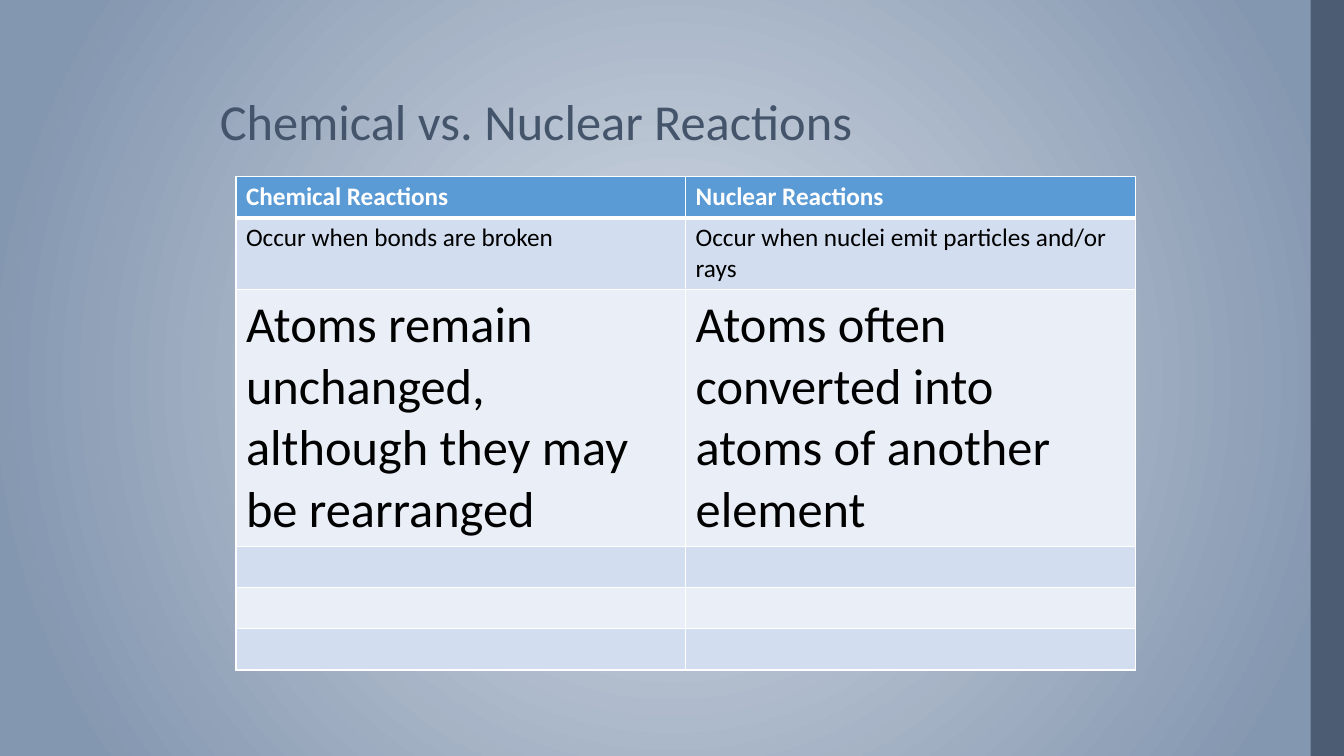
import lxml.etree
import pptx
import pptx.dml.color
import pptx.enum.shapes
import pptx.enum.text
import pptx.oxml
import pptx.oxml.ns
import pptx.util

WIDTH, HEIGHT = 13.33, 7.5
FONT = "Calibri"
COLORS = {
    "glow": "D6DCE5",
    "edge": "8497B0",
    "slate": "44546A",
    "header": "5B9BD5",
    "band_dark": "D2DEEF",
    "band_light": "EAEFF7",
    "white": "FFFFFF",
    "black": "000000",
}
REACTIONS = [
    ("Chemical Reactions", "Nuclear Reactions"),
    ("Occur when bonds are broken", "Occur when nuclei emit particles and/or rays"),
    ("Atoms remain unchanged, although they may be rearranged",
     "Atoms often converted into atoms of another element"),
    ("", ""),
    ("", ""),
    ("", ""),
]
EMPHASIS_ROW = 2
COLUMN_WIDTH, ROW_HEIGHT = 4.46, 0.41


def inches(*lengths):
    return [pptx.util.Inches(length) for length in lengths]


def rgb(name):
    return pptx.dml.color.RGBColor.from_string(COLORS[name])


def drawing_element(xml):
    namespace = pptx.oxml.ns.nsdecls("a")
    return pptx.oxml.parse_xml(xml.replace(" NS", f" {namespace}", 1))


def write_text(frame, text, size=18, color="black", bold=False, spacing=1.0):
    para = frame.paragraphs[0]
    para.alignment = pptx.enum.text.PP_ALIGN.LEFT
    para.line_spacing = spacing
    para.font.size = pptx.util.Pt(size)
    if text:
        span = para.add_run()
        span.text = text
        span.font.name = FONT
        span.font.size = pptx.util.Pt(size)
        span.font.bold = bold
        span.font.color.rgb = rgb(color)


def paint_background(page):
    fill = page.background.fill
    fill.solid()
    fill.fore_color.rgb = rgb("edge")
    solid = page.element.find(".//" + pptx.oxml.ns.qn("p:bgPr"))[0]
    gradient = drawing_element(
        '<a:gradFill NS rotWithShape="1"><a:gsLst>'
        f'<a:gs pos="0"><a:srgbClr val="{COLORS["glow"]}"/></a:gs>'
        f'<a:gs pos="90000"><a:srgbClr val="{COLORS["edge"]}"/></a:gs>'
        '</a:gsLst><a:path path="circle">'
        '<a:fillToRect l="50000" t="50000" r="50000" b="50000"/>'
        '</a:path></a:gradFill>')
    solid.getparent().replace(solid, gradient)


def add_side_bar(page, left, opacity):
    bar = page.shapes.add_shape(
        pptx.enum.shapes.MSO_SHAPE.RECTANGLE, *inches(left, 0, WIDTH - left, HEIGHT))
    bar.shadow.inherit = False
    bar.line.fill.background()
    bar.fill.solid()
    bar.fill.fore_color.rgb = rgb("slate")
    color = bar.element.spPr.find(".//" + pptx.oxml.ns.qn("a:srgbClr"))
    color.append(drawing_element(f'<a:alpha NS val="{opacity * 1000}"/>'))


def place_title(page, text):
    title = page.shapes.title
    title.left, title.top, title.width, title.height = inches(2.08, 0.19, 10.36, 1.36)
    title.text_frame.vertical_anchor = pptx.enum.text.MSO_ANCHOR.BOTTOM
    title.text_frame.word_wrap = True
    write_text(title.text_frame, text, size=36, color="slate", spacing=0.9)


def add_borders(cell, top, bottom):
    properties = cell._tc.get_or_add_tcPr()
    for side, points in (("L", 1), ("R", 1), ("T", top), ("B", bottom)):
        properties.append(drawing_element(
            f'<a:ln{side} NS w="{pptx.util.Pt(points)}"><a:solidFill>'
            f'<a:srgbClr val="{COLORS["white"]}"/></a:solidFill></a:ln{side}>'))


def add_comparison(page, left, top):
    row_count, column_count = len(REACTIONS), len(REACTIONS[0])
    table = page.shapes.add_table(row_count, column_count, *inches(
        left, top, column_count * COLUMN_WIDTH, row_count * ROW_HEIGHT)).table
    for row_index, row in enumerate(REACTIONS):
        is_header = row_index == 0
        band = "header" if is_header else ("band_light", "band_dark")[row_index % 2]
        for column_index, text in enumerate(row):
            cell = table.cell(row_index, column_index)
            # Borders come before the fill in the cell properties
            add_borders(cell, top=3 if row_index == 1 else 1,
                        bottom=3 if is_header else 1)
            cell.fill.solid()
            cell.fill.fore_color.rgb = rgb(band)
            write_text(cell.text_frame, text, bold=is_header,
                       size=36 if row_index == EMPHASIS_ROW else 18,
                       color="white" if is_header else "black")


def main():
    deck = pptx.Presentation()
    deck.slide_width, deck.slide_height = inches(WIDTH, HEIGHT)
    page = deck.slides.add_slide(deck.slide_layouts[5])

    # Backdrop
    paint_background(page)
    add_side_bar(page, left=13, opacity=87)

    # Content
    place_title(page, "Chemical vs. Nuclear Reactions")
    add_comparison(page, left=2.34, top=1.75)

    deck.save("out.pptx")


if __name__ == "__main__":
    main()
